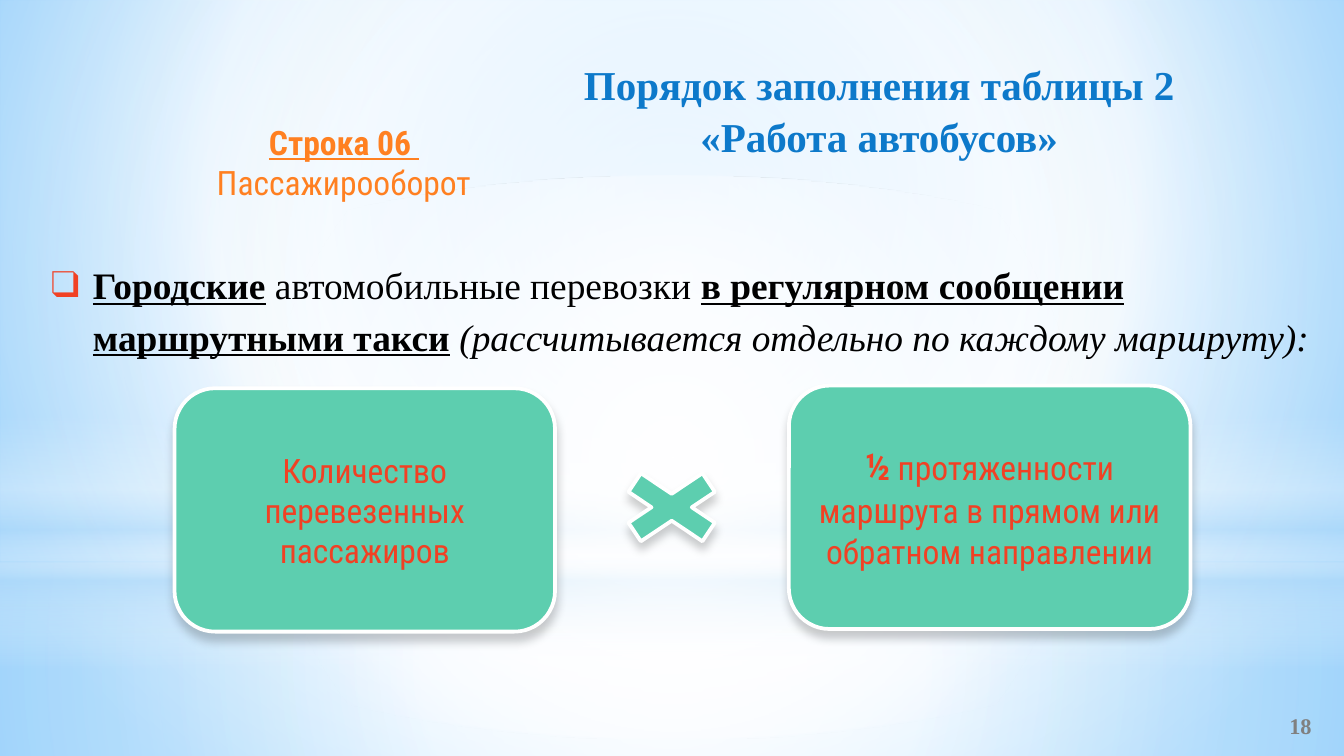
from lxml.etree import SubElement
from pptx import Presentation
from pptx.dml.color import RGBColor
from pptx.enum.shapes import MSO_SHAPE
from pptx.enum.text import MSO_ANCHOR, MSO_AUTO_SIZE, PP_ALIGN
from pptx.oxml.ns import qn
from pptx.util import Cm, Pt

THEME = {
    "serif": "Times New Roman", "sans": "Roboto Condensed",
    "title": "0D79CA", "label": "FF8021", "text": "000000", "accent": "F14124",
    "number": "808080", "card": "5DCEAF", "edge": "FFFFFF", "shadow": "000000",
    "title_size": 22, "body_size": 20, "card_size": 18, "number_size": 12,
}
WIDTH, HEIGHT = 25.4, 14.29
HORIZON = 10.64

BACKDROP = {"stops": [(0, "9ED5FF", 100), (60, "FFFFFF", 100), (100, "5BB9FF", 100)],
            "focus": (20, 10, 20, 60)}
CENTRE = (50, 50, 50, 50)
BANDS = [
    (MSO_SHAPE.RECTANGLE, HORIZON, HEIGHT - HORIZON,
     {"stops": [(0, "FFFFFF", 91), (37, "FFFFFF", 76), (100, "B4DCFA", 79)], "focus": CENTRE}),
    (MSO_SHAPE.RECTANGLE, 0, HORIZON,
     {"stops": [(0, "FFFFFF", 89), (48, "FFFFFF", 62), (100, "B4DCFA", 79)], "focus": CENTRE}),
    (MSO_SHAPE.RECTANGLE, 7.85, 4.78,
     {"stops": [(0, "FFFFFF", 0), (29, "FFFFFF", 30), (45, "B4DCFA", 40),
                (55, "FFFFFF", 26), (65, "B4DCFA", 60), (100, "FFFFFF", 0)], "focus": None}),
    (MSO_SHAPE.OVAL, 3.33, HORIZON,
     {"stops": [(0, "FFFFFF", 100), (56, "FFFFFF", 0)], "focus": CENTRE}),
]

TITLE = [[("Порядок заполнения таблицы 2\v«Работа автобусов»", "b")]]
LABEL = [[("Строка 06 ", "bu"), ("\vПассажирооборот", "")]]
RULE = [[
    ("Городские", "bu"), (" автомобильные перевозки ", ""),
    ("в регулярном сообщении маршрутными такси", "bu"), (" ", ""),
    ("(рассчитывается отдельно по каждому мар", "i"), ("ш", "i", 21), ("руту):", "i"),
]]
NUMBER = [[("18", "b")]]
FACTORS = [
    ((3.3, 7.34, 7.19, 4.6),
     [[("Количество перевезенных", "")], [("пассажиров", "")]]),
    ((14.91, 7.29, 7.59, 4.6),
     [[("½", "b", 20), (" протяженности мар", ""), ("ш", "", 19),
       ("рута в прямом или обратном направлении", "")]]),
]
TIMES_SIGN = (11.35, 8.69, 2.69, 1.8)


def add_color(parent, color, opacity=100):
    node = SubElement(parent, qn("a:srgbClr"), val=color)
    if opacity < 100:
        SubElement(node, qn("a:alpha"), val=str(opacity * 1000))


def paint_gradient(fill, properties, stops, focus):
    fill.solid()
    solid = properties.find(qn("a:solidFill"))
    gradient = SubElement(properties, qn("a:gradFill"), rotWithShape="1")
    stop_list = SubElement(gradient, qn("a:gsLst"))
    for position, color, opacity in stops:
        add_color(SubElement(stop_list, qn("a:gs"), pos=str(position * 1000)), color, opacity)
    if focus:
        circle = SubElement(gradient, qn("a:path"), path="circle")
        sides = {side: str(share * 1000) for side, share in zip("ltrb", focus)}
        SubElement(circle, qn("a:fillToRect"), **sides)
    else:
        SubElement(gradient, qn("a:lin"), ang="5400000", scaled="0")
    properties.replace(solid, gradient)


def place(shape, box):
    shape.left, shape.top, shape.width, shape.height = map(Cm, box)


def write(shape, paragraphs, font, size, color, align, anchor=MSO_ANCHOR.TOP, spacing=1, before=0):
    frame = shape.text_frame
    frame.word_wrap = True
    frame.auto_size = MSO_AUTO_SIZE.NONE
    frame.vertical_anchor = anchor
    for index, runs in enumerate(paragraphs):
        paragraph = frame.add_paragraph() if index else frame.paragraphs[0]
        paragraph.alignment = align
        paragraph.line_spacing = spacing
        paragraph.space_before = Pt(before)
        for words, style, *own_size in runs:
            for line, piece in enumerate(words.split("\v")):
                if line:
                    paragraph.add_line_break()
                if not piece:
                    continue
                run = paragraph.add_run()
                run.text = piece
                run.font.name = THEME[font]
                run.font.size = Pt(own_size[0] if own_size else THEME[size])
                run.font.color.rgb = RGBColor.from_string(THEME[color])
                run.font.bold = "b" in style
                run.font.italic = "i" in style
                run.font.underline = "u" in style


def add_bullet(paragraph, indent):
    properties = paragraph._p.get_or_add_pPr()
    properties.set("marL", str(Cm(indent)))
    properties.set("indent", str(-Cm(indent)))
    add_color(SubElement(properties, qn("a:buClr")), THEME["accent"])
    SubElement(properties, qn("a:buFont"), typeface=THEME["serif"])
    SubElement(properties, qn("a:buChar"), char="❑")


def add_raised(slide, kind, box):
    shape = slide.shapes.add_shape(kind, *map(Cm, box))
    shape.fill.solid()
    shape.fill.fore_color.rgb = RGBColor.from_string(THEME["card"])
    shape.line.color.rgb = RGBColor.from_string(THEME["edge"])
    shape.line.width = Pt(2)
    shape.shadow.inherit = False
    effects = shape._element.spPr.find(qn("a:effectLst"))
    shadow = SubElement(effects, qn("a:outerShdw"), blurRad=str(Pt(5)), dist=str(Pt(4)),
                        dir="5400000", rotWithShape="0")
    add_color(shadow, THEME["shadow"], 20)
    return shape


def main():
    deck = Presentation()
    deck.slide_width, deck.slide_height = Cm(WIDTH), Cm(HEIGHT)
    slide = deck.slides.add_slide(deck.slide_layouts[1])
    title, rule = slide.placeholders

    backdrop = slide.background.fill
    backdrop.solid()
    paint_gradient(backdrop, slide._element.find(".//" + qn("p:bgPr")), **BACKDROP)
    for depth, (kind, top, height, gradient) in enumerate(BANDS):
        band = slide.shapes.add_shape(kind, 0, Cm(top), Cm(WIDTH), Cm(height))
        paint_gradient(band.fill, band._element.spPr, **gradient)
        band.line.fill.background()
        band.shadow.inherit = False
        slide.shapes._spTree.insert(2 + depth, band._element)

    place(title, (9.91, 0.94, 13.41, 2.13))
    write(title, TITLE, "serif", "title_size", "title", PP_ALIGN.CENTER, spacing=1.06)
    place(rule, (0.71, 4.75, 24.41, 2.01))
    write(rule, RULE, "serif", "body_size", "text", PP_ALIGN.LEFT, spacing=1.1)
    add_bullet(rule.text_frame.paragraphs[0], 0.79)

    number = slide.shapes.add_textbox(*map(Cm, (19.96, 13.34, 5.08, 0.76)))
    write(number, NUMBER, "serif", "number_size", "number", PP_ALIGN.RIGHT, MSO_ANCHOR.MIDDLE)
    label = slide.shapes.add_textbox(*map(Cm, (3.3, 2.18, 6.4, 1.8)))
    write(label, LABEL, "sans", "card_size", "label", PP_ALIGN.CENTER, before=6)

    for box, words in FACTORS:
        card = add_raised(slide, MSO_SHAPE.ROUNDED_RECTANGLE, box)
        write(card, words, "sans", "card_size", "accent", PP_ALIGN.CENTER, MSO_ANCHOR.MIDDLE)
    add_raised(slide, MSO_SHAPE.MATH_MULTIPLY, TIMES_SIGN)

    deck.save("out.pptx")


if __name__ == "__main__":
    main()
